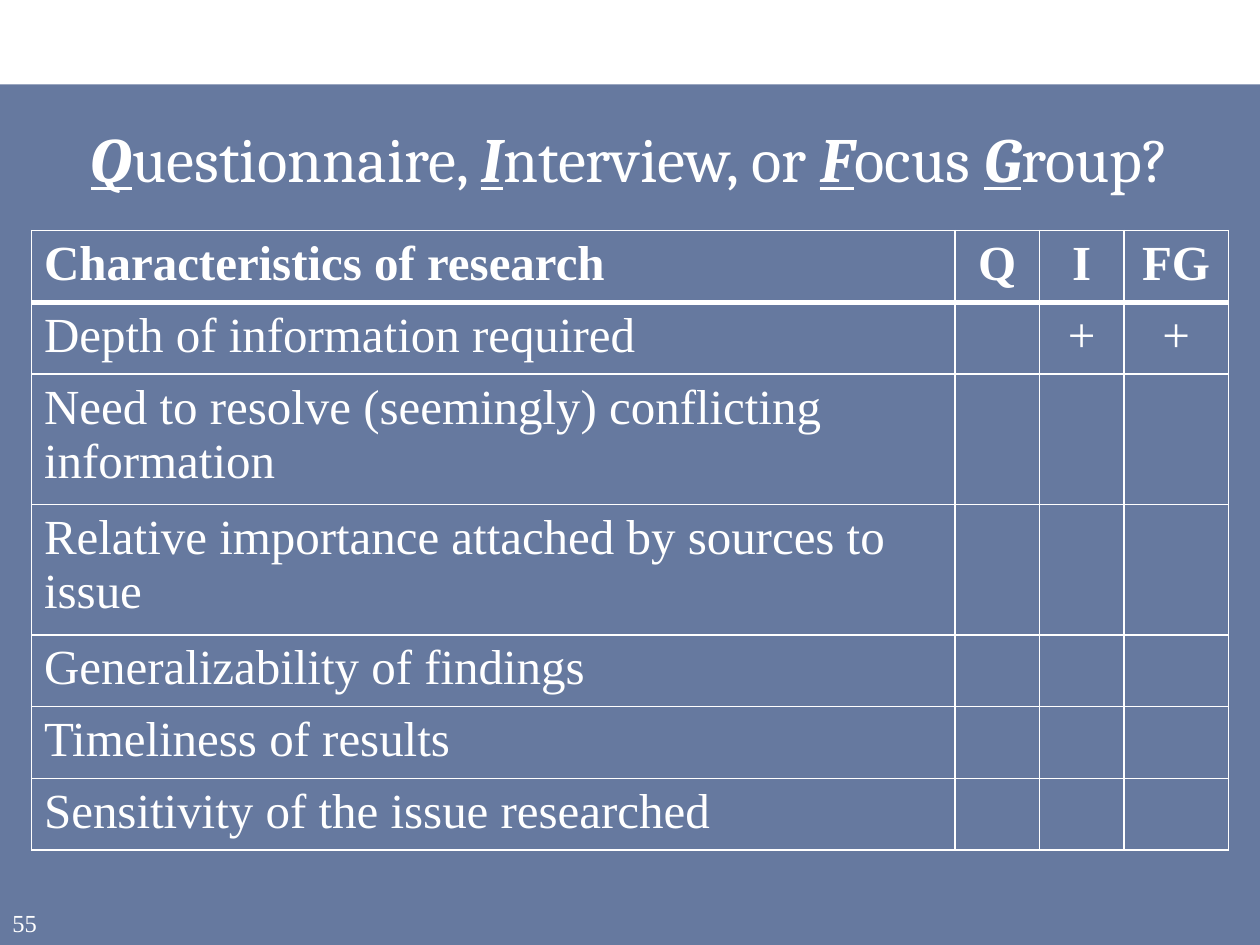
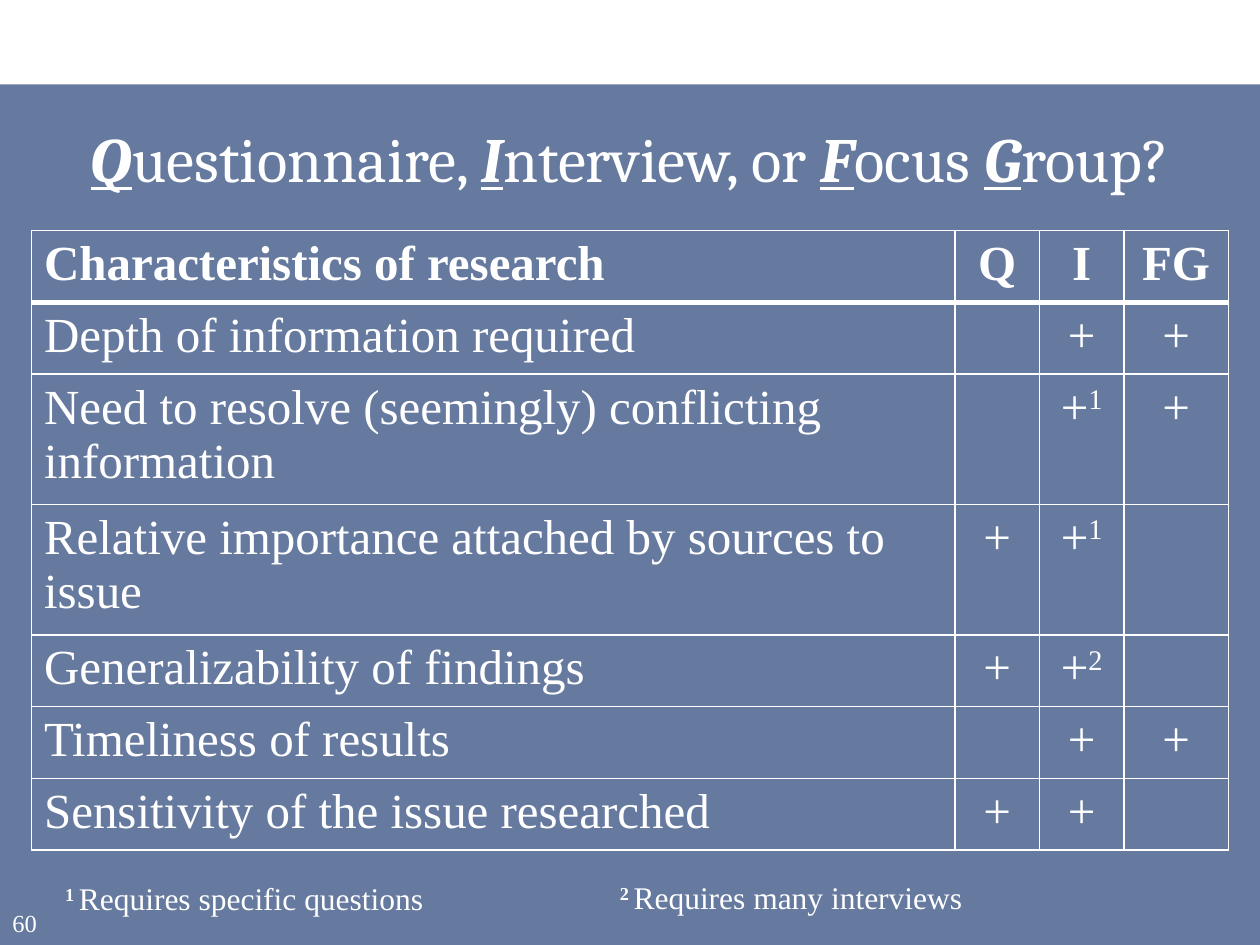
from pptx import Presentation
from pptx.dml.color import RGBColor
from pptx.enum.shapes import MSO_SHAPE
from pptx.enum.text import MSO_ANCHOR, MSO_AUTO_SIZE, PP_ALIGN
from pptx.oxml.ns import qn
from pptx.util import Inches, Pt
from lxml import etree

RECTANGLE = MSO_SHAPE.RECTANGLE
LEFT, CENTER = PP_ALIGN.LEFT, PP_ALIGN.CENTER
TOP, MIDDLE = MSO_ANCHOR.TOP, MSO_ANCHOR.MIDDLE
NO_FIT = MSO_AUTO_SIZE.NONE

WIDTH, HEIGHT = Inches(10), Inches(7.5)
WHITE, NAVY = "FFFFFF", "002060"
TITLE_FONT, BODY_FONT = "Cambria", "Times New Roman"
TITLE_ONLY = 5

# Boxes are left, top, width, height in inches
BAND_BOX = (0, 0.67, 10, 6.83)
TITLE_BOX = (0, 0.83, 10, 0.83)
NUMBER_BOX = (0, 7.16, 0.6, 0.34)
TABLE_BOX = (0.25, 1.83, 9.5, 4.9)
NOTE_BOXES = ((0.39, 6.93, 3.1, 0.42), (4.8, 6.92, 2.96, 0.4))

TITLE_WORDS = ("Questionnaire, ", "Interview, ", "or ", "Focus ", "Group?")
COLUMN_WIDTHS = (7.33, 0.67, 0.67, 0.83)
ONE_LINE, TWO_LINES = 0.57, 1.03
HEADER = ("Characteristics of research", "Q", "I", "FG")
CHARACTERISTICS = (
    ("Depth of information required", ONE_LINE),
    ("Need to resolve (seemingly) conflicting information", TWO_LINES),
    ("Relative importance attached by sources to issue", TWO_LINES),
    ("Generalizability of findings", ONE_LINE),
    ("Timeliness of results", ONE_LINE),
    ("Sensitivity of the issue researched", ONE_LINE),
)

# Marks under Q, I and FG; a digit after the plus refers to a footnote
FIRST_MARKS = [("", "+", "+")] + [("", "", "")] * 5
ALL_MARKS = [
    ("", "+", "+"),
    ("", "+1", "+"),
    ("+", "+1", ""),
    ("+", "+2", ""),
    ("", "+", "+"),
    ("+", "+", ""),
]
FOOTNOTES = ("Requires specific questions", "Requires many interviews")


def color(hex_string):
    return RGBColor.from_string(hex_string)


def inches(box):
    return [Inches(length) for length in box]


def add_span(para, text, size, font=BODY_FONT, bold=False, raised=False):
    span = para.add_run()
    span.text = text
    span.font.size = Pt(size)
    span.font.name = font
    span.font.bold = bold
    span.font.color.rgb = color(WHITE)
    if raised:
        span._r.get_or_add_rPr().set("baseline", "30000")
    return span


def add_text_box(page, box, align, wrap):
    """Add an empty text box and return its first paragraph."""
    frame = page.shapes.add_textbox(*inches(box)).text_frame
    frame.word_wrap = wrap
    frame.paragraphs[0].alignment = align
    return frame.paragraphs[0]


def add_band(page):
    band = page.shapes.add_shape(RECTANGLE, *inches(BAND_BOX))
    band.shadow.inherit = False
    band.line.fill.background()
    band.fill.solid()
    band.fill.fore_color.rgb = color(NAVY)
    tint = band.element.spPr.find(qn("a:solidFill"))[0]
    etree.SubElement(tint, qn("a:alpha")).set("val", "60000")
    page.shapes.title.element.addprevious(band.element)


def fill_title(page):
    """Write the title with the initials of the methods emphasised."""
    title = page.shapes.title
    title.left, title.top, title.width, title.height = inches(TITLE_BOX)
    frame = title.text_frame
    frame.auto_size = NO_FIT
    frame.vertical_anchor = MIDDLE
    para = frame.paragraphs[0]
    para.alignment = CENTER
    for word in TITLE_WORDS:
        if word[0].isupper():
            initial = add_span(para, word[0], 36, TITLE_FONT, bold=True)
            initial.font.italic = initial.font.underline = True
            word = word[1:]
        add_span(para, word, 36, TITLE_FONT)


def add_number(page, number):
    para = add_text_box(page, NUMBER_BOX, LEFT, True)
    add_span(para, str(number), 14)


def set_borders(cell, **widths):
    """Draw white cell edges; widths are in points, keyed by edge tag."""
    properties = cell._tc.get_or_add_tcPr()
    for edge, width in widths.items():
        line = etree.SubElement(properties, qn(f"a:{edge}"), w=str(Pt(width)))
        fill = etree.SubElement(line, qn("a:solidFill"))
        etree.SubElement(fill, qn("a:srgbClr"), val=WHITE)


def fill_cell(cell, text, row, column):
    is_header = row == 0
    set_borders(cell, lnL=1, lnR=1, lnT=3 if row == 1 else 1,
                lnB=3 if is_header else 1)
    cell.fill.background()
    cell.vertical_anchor = TOP
    para = cell.text_frame.paragraphs[0]
    para.alignment = CENTER if column else LEFT
    body = text.rstrip("12")
    if body:
        add_span(para, body, 28, bold=is_header)
    if body != text:
        add_span(para, text[len(body):], 28, raised=True)


def add_comparison(page, marks):
    rows = [HEADER] + [(name, *row_marks) for (name, _), row_marks
                       in zip(CHARACTERISTICS, marks)]
    heights = [ONE_LINE] + [height for _, height in CHARACTERISTICS]
    table = page.shapes.add_table(len(rows), len(HEADER), *inches(TABLE_BOX)).table
    table.first_row = table.horz_banding = False
    for column, width in zip(table.columns, COLUMN_WIDTHS):
        column.width = Inches(width)
    for row, (texts, height) in enumerate(zip(rows, heights)):
        table.rows[row].height = Inches(height)
        for column, text in enumerate(texts):
            fill_cell(table.cell(row, column), text, row, column)


def add_footnotes(page, notes):
    for number, (note, box) in enumerate(zip(notes, NOTE_BOXES), start=1):
        para = add_text_box(page, box, CENTER, False)
        add_span(para, f"{number} ", 18, bold=True, raised=True)
        add_span(para, note, 18)


def add_comparison_page(deck, number, marks, notes=()):
    page = deck.slides.add_slide(deck.slide_layouts[TITLE_ONLY])
    add_band(page)
    fill_title(page)
    add_number(page, number)
    add_comparison(page, marks)
    add_footnotes(page, notes)


def main():
    deck = Presentation()
    deck.slide_width, deck.slide_height = WIDTH, HEIGHT
    add_comparison_page(deck, 55, FIRST_MARKS)
    add_comparison_page(deck, 60, ALL_MARKS, FOOTNOTES)
    deck.save("out.pptx")


if __name__ == "__main__":
    main()
